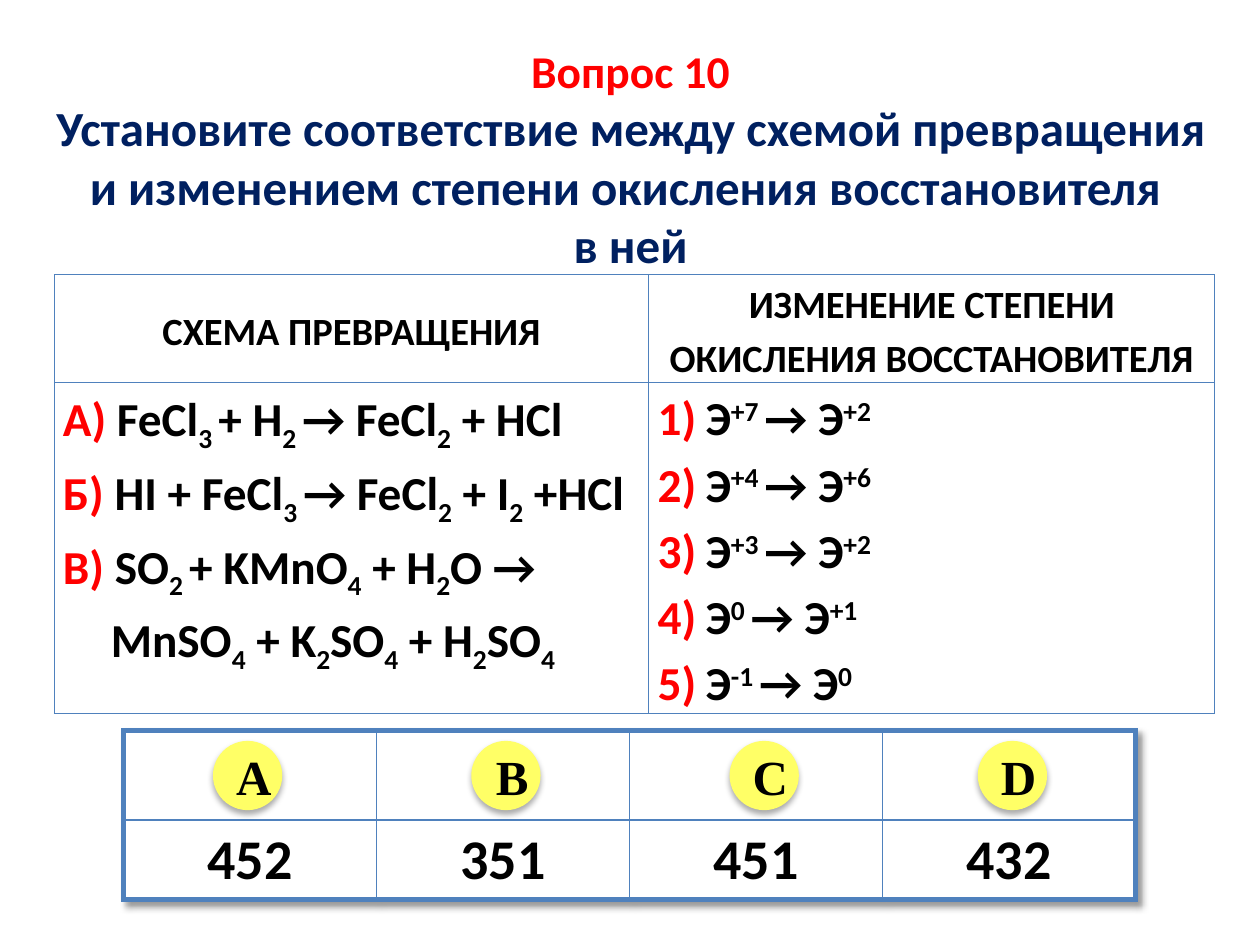
from lxml.etree import SubElement
from pptx import Presentation
from pptx.dml.color import RGBColor
from pptx.enum.shapes import MSO_SHAPE
from pptx.enum.text import MSO_ANCHOR, PP_ALIGN
from pptx.oxml import parse_xml
from pptx.oxml.ns import nsdecls, qn
from pptx.util import Inches, Pt

COLORS = {"text": "000000", "red": "FF0000", "navy": "002060", "paper": "FFFFFF",
          "line": "4F81BD", "badge": "FFFF66"}
UNIT = 0.1


def grid(n):
    return Inches(n * UNIT)


class Quiz:
    """Draws quiz elements on a grid of 100 columns by 75 rows."""

    def __init__(self, prs):
        self.s = prs.slides.add_slide(prs.slide_layouts[6])

    def color(self, name):
        return RGBColor.from_string(COLORS[name])

    def style(self, r, size, color="text", font="Calibri", baseline=0):
        r.font.size, r.font.bold, r.font.name = Pt(size), True, font
        r.font.color.rgb = self.color(color)
        if baseline:
            r._r.get_or_add_rPr().set("baseline", str(baseline * 1000))

    def line(self, p, text, size, color="text", font="Calibri"):
        p.text = text
        p.alignment = PP_ALIGN.CENTER
        self.style(p.runs[0], size, color, font)

    def shadow(self, parent, blur, dist, angle, alpha):
        parent.append(parse_xml(
            f'<a:effectLst {nsdecls("a")}><a:outerShdw blurRad="{Pt(blur)}" dist="{Pt(dist)}" '
            f'dir="{angle * 60000}" rotWithShape="0"><a:srgbClr val="000000">'
            f'<a:alpha val="{alpha * 1000}"/></a:srgbClr></a:outerShdw></a:effectLst>'))

    def shape(self, kind, x, y, w, h, fill):
        sp = self.s.shapes.add_shape(kind, grid(x), grid(y), grid(w), grid(h))
        sp.shadow.inherit = False
        sp.fill.solid()
        sp.fill.fore_color.rgb = self.color(fill)
        sp.line.fill.background()
        return sp

    def heading(self, x, y, w, h, lines):
        tf = self.shape(MSO_SHAPE.RECTANGLE, x, y, w, h, "paper").text_frame
        tf.word_wrap, tf.vertical_anchor = True, MSO_ANCHOR.TOP
        for i, (text, size, color) in enumerate(lines):
            p = tf.add_paragraph() if i else tf.paragraphs[0]
            self.line(p, text, size, color)

    def badge(self, x, y, size, letter):
        sp = self.shape(MSO_SHAPE.OVAL, x, y, size, size, "badge")
        sp._element.spPr.remove(sp._element.spPr.find(qn("a:effectLst")))
        self.shadow(sp._element.spPr, 3.5, 2.2, 90, 32)
        tf = sp.text_frame
        tf.word_wrap, tf.vertical_anchor = True, MSO_ANCHOR.MIDDLE
        tf.margin_left, tf.margin_right = grid(1), 0
        self.line(tf.paragraphs[0], letter, 28, font="Times New Roman")

    def table(self, x, y, cols, rows, inner, outer, fill=None):
        frame = self.s.shapes.add_table(len(rows), len(cols), grid(x), grid(y),
                                        grid(sum(cols)), grid(sum(rows)))
        table = frame.table
        table.first_row = table.horz_banding = False
        for col, w in zip(table.columns, cols):
            col.width = grid(w)
        for row, h in zip(table.rows, rows):
            row.height = grid(h)
        for i in range(len(rows)):
            for j in range(len(cols)):
                edges = {"L": j == 0, "R": j == len(cols) - 1,
                         "T": i == 0, "B": i == len(rows) - 1}
                widths = {side: outer if edge else inner for side, edge in edges.items()}
                self.cell(table.cell(i, j), widths, fill)
        return table

    def cell(self, cell, widths, fill):
        cell.margin_left = cell.margin_right = grid(0.7)
        cell.margin_top = cell.margin_bottom = 0
        cell.vertical_anchor = MSO_ANCHOR.MIDDLE
        tcPr = cell._tc.get_or_add_tcPr()
        for side, width in widths.items():
            ln = SubElement(tcPr, qn(f"a:ln{side}"), w=str(Pt(width)))
            SubElement(SubElement(ln, qn("a:solidFill")), qn("a:srgbClr"), val=COLORS["line"])
        if fill:
            cell.fill.solid()
            cell.fill.fore_color.rgb = self.color(fill)
        else:
            cell.fill.background()

    def label(self, cell, text, size, spacing=None):
        p = cell.text_frame.paragraphs[0]
        self.line(p, text, size)
        if spacing:
            p.line_spacing, p.space_after = spacing, Pt(6)

    def formulas(self, cell, items, baseline, numbered=False):
        cell.vertical_anchor = MSO_ANCHOR.TOP
        tf = cell.text_frame
        for i, (mark, formula) in enumerate(items):
            p = tf.add_paragraph() if i else tf.paragraphs[0]
            pPr = p._p.get_or_add_pPr()
            pPr.set("marL", str(grid(3.8)))
            pPr.set("indent", str(grid(-3.8)))
            if numbered:
                SubElement(SubElement(pPr, qn("a:buClr")), qn("a:srgbClr"), val=COLORS["red"])
                SubElement(pPr, qn("a:buAutoNum"), type="arabicParenR")
            p.line_spacing = 1.15
            if mark:
                r = p.add_run()
                r.text = mark
                self.style(r, 27, "red")
            for k, part in enumerate(formula.split("_")):
                if part:
                    r = p.add_run()
                    r.text = part
                    self.style(r, 27, baseline=baseline * (k % 2))


def main():
    prs = Presentation()
    prs.slide_width, prs.slide_height = grid(100), grid(75)
    quiz = Quiz(prs)

    answers = quiz.table(9.8, 58, [20.08] * 4, [7.1, 6.3], 1, 3, "paper")
    quiz.shadow(answers._tbl.tblPr, 4, 3, 45, 40)
    style_id = answers._tbl.tblPr.find(qn("a:tableStyleId"))
    answers._tbl.tblPr.append(style_id)
    for j, (letter, x, answer) in enumerate(zip("ABCD", (16.9, 37.4, 57.9, 77.6),
                                                ("452", "351", "451", "432"))):
        quiz.label(answers.cell(1, j), answer, 32)
        quiz.badge(x, 58.8, 5.5, letter)

    quiz.heading(2.8, 2.9, 94.5, 54.4, [
        ("Вопрос 10", 26, "red"),
        ("Установите соответствие между схемой превращения и изменением "
         "степени окисления восстановителя ", 28, "navy"),
        ("в ней", 28, "navy")])

    task = quiz.table(4.3, 21.8, [47.2, 44.9], [8.4, 25.9], 0.5, 0.5)
    quiz.label(task.cell(0, 0), "СХЕМА ПРЕВРАЩЕНИЯ", 22, 1.15)
    quiz.label(task.cell(0, 1), "ИЗМЕНЕНИЕ СТЕПЕНИ ОКИСЛЕНИЯ ВОССТАНОВИТЕЛЯ", 22, 1.15)
    quiz.formulas(task.cell(1, 0), [
        ("А) ", "FeCl_3 _+ H_2 _→ FeCl_2_ + HCl"),
        ("Б) ", "HI + FeCl_3 _→ FeCl_2_ + I_2_ +HCl"),
        ("В) ", "SO_2 _+ KMnO_4_ + H_2_O → MnSO_4_ + K_2_SO_4_ + H_2_SO_4_")], -25)
    changes = [("+7", "+2"), ("+4", "+6"), ("+3", "+2"), ("0", "+1"), ("-1", "0")]
    quiz.formulas(task.cell(1, 1), [("", f"Э_{a} _→ Э_{b}_") for a, b in changes], 30, True)

    prs.save("out.pptx")


if __name__ == "__main__":
    main()
